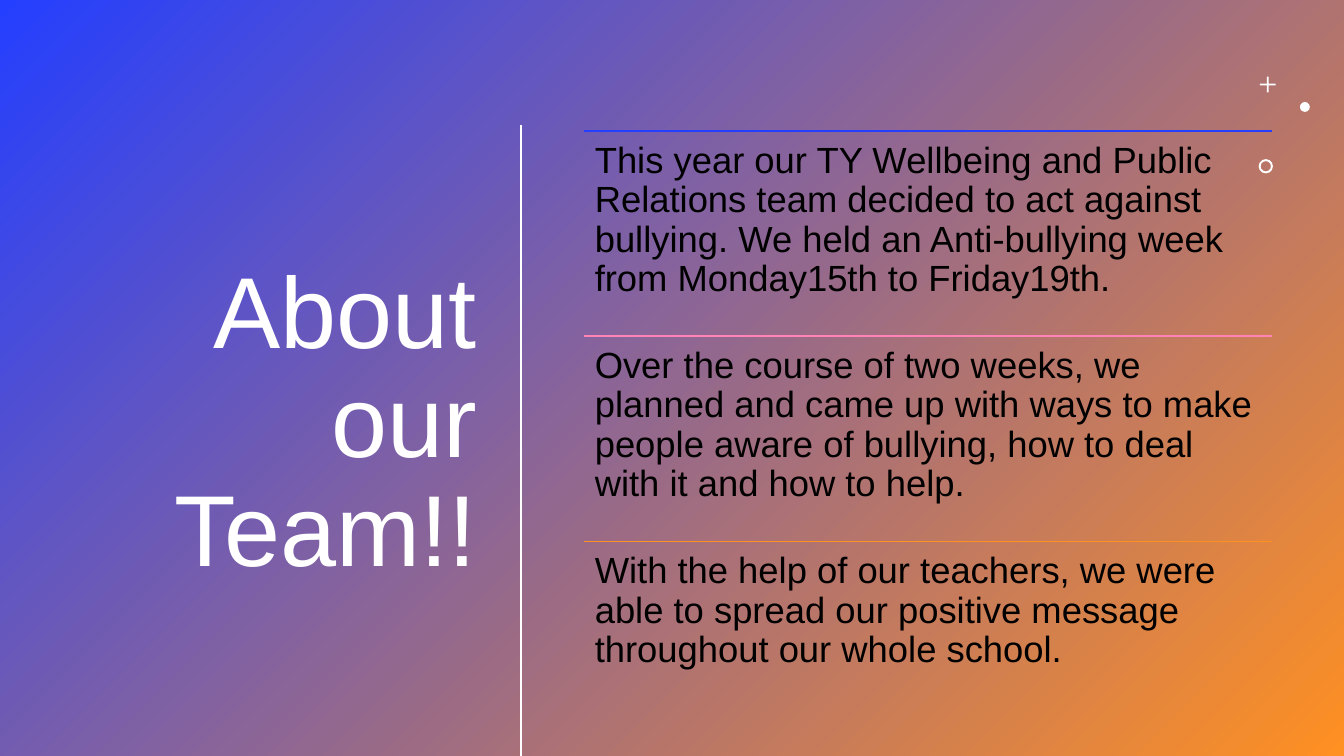
import pptx
import pptx.dml.color
import pptx.enum.shapes
import pptx.enum.text
import pptx.oxml
import pptx.util
from pptx.util import Cm

SHAPES = pptx.enum.shapes.MSO_SHAPE
ALIGN = pptx.enum.text.PP_ALIGN
ANCHOR = pptx.enum.text.MSO_ANCHOR


def color(hex_value):
    return pptx.dml.color.RGBColor.from_string(hex_value)


def add_rule(x1, y1, x2, y2, hex_value, weight):
    rule = slide.shapes.add_connector(
        pptx.enum.shapes.MSO_CONNECTOR.STRAIGHT, Cm(x1), Cm(y1), Cm(x2), Cm(y2))
    rule.line.color.rgb = color(hex_value)
    rule.line.width = pptx.util.Pt(weight)
    rule._element.spPr.append(pptx.oxml.parse_xml(
        '<a:effectLst xmlns:a="http://schemas.openxmlformats.org/drawingml/2006/main"/>'))


deck = pptx.Presentation()
deck.slide_width, deck.slide_height = Cm(33.87), Cm(19.05)
slide = deck.slides.add_slide(deck.slide_layouts[6])

backdrop = slide.shapes.add_shape(
    SHAPES.RECTANGLE, 0, 0, deck.slide_width, deck.slide_height)
backdrop.shadow.inherit = False
backdrop.line.fill.background()
backdrop.fill.gradient()
backdrop.fill.gradient_angle = 315
for stop, hex_value in zip(backdrop.fill.gradient_stops, ["243FFF", "FF9022"]):
    stop.color.rgb = color(hex_value)

ornaments = [
    (SHAPES.CROSS, 31.75, 1.93, 0.4, 0.44),
    (SHAPES.OVAL, 32.76, 2.57, 0.25, None),
    (SHAPES.DONUT, 31.72, 4.01, 0.36, 0.14),
]
for kind, x, y, size, thickness in ornaments:
    ornament = slide.shapes.add_shape(kind, Cm(x), Cm(y), Cm(size), Cm(size))
    ornament.shadow.inherit = False
    ornament.fill.solid()
    ornament.fill.fore_color.rgb = color("FFFFFF")
    ornament.line.fill.background()
    if thickness:
        ornament.adjustments[0] = thickness

add_rule(13.13, 3.15, 13.13, 19.05, "FFFFFF", 2)

statements = [
    ("243FFF", "This year our TY Wellbeing and Public Relations team decided to act against "
               "bullying. We held an Anti-bullying week from Monday15th to Friday19th."),
    ("FF83B6", "Over the course of two weeks, we planned and came up with ways "
               "to make people aware of bullying, how to deal with it and how to help."),
    ("FF9022", "With the help of our teachers, we were able to spread our positive message "
               "throughout our whole school."),
]
left, top, width, pitch = 14.71, 3.3, 17.35, 5.17
texts = [("About our Team!!", 1.32, 2.95, 10.95, 15.52, 0.25, 72, "FFFFFF",
          ALIGN.RIGHT, ANCHOR.MIDDLE)]
for row, (rule_color, statement) in enumerate(statements):
    y = top + row * pitch
    add_rule(left, y, left + width, y, rule_color, 1)
    texts.append((statement, left, y, width, pitch, 0.28, 26, "000000",
                  ALIGN.LEFT, ANCHOR.TOP))

for words, x, y, w, h, inset, size, hex_value, align, anchor in texts:
    frame = slide.shapes.add_textbox(Cm(x), Cm(y), Cm(w), Cm(h)).text_frame
    frame.word_wrap = True
    frame.vertical_anchor = anchor
    frame.margin_left = frame.margin_right = Cm(inset)
    frame.margin_top = frame.margin_bottom = Cm(inset if align == ALIGN.LEFT else 0.13)
    paragraph = frame.paragraphs[0]
    paragraph.alignment = align
    paragraph.line_spacing = 0.9
    run = paragraph.add_run()
    run.text = words
    run.font.name = "Arial"
    run.font.size = pptx.util.Pt(size)
    run.font.color.rgb = color(hex_value)

deck.save("out.pptx")
